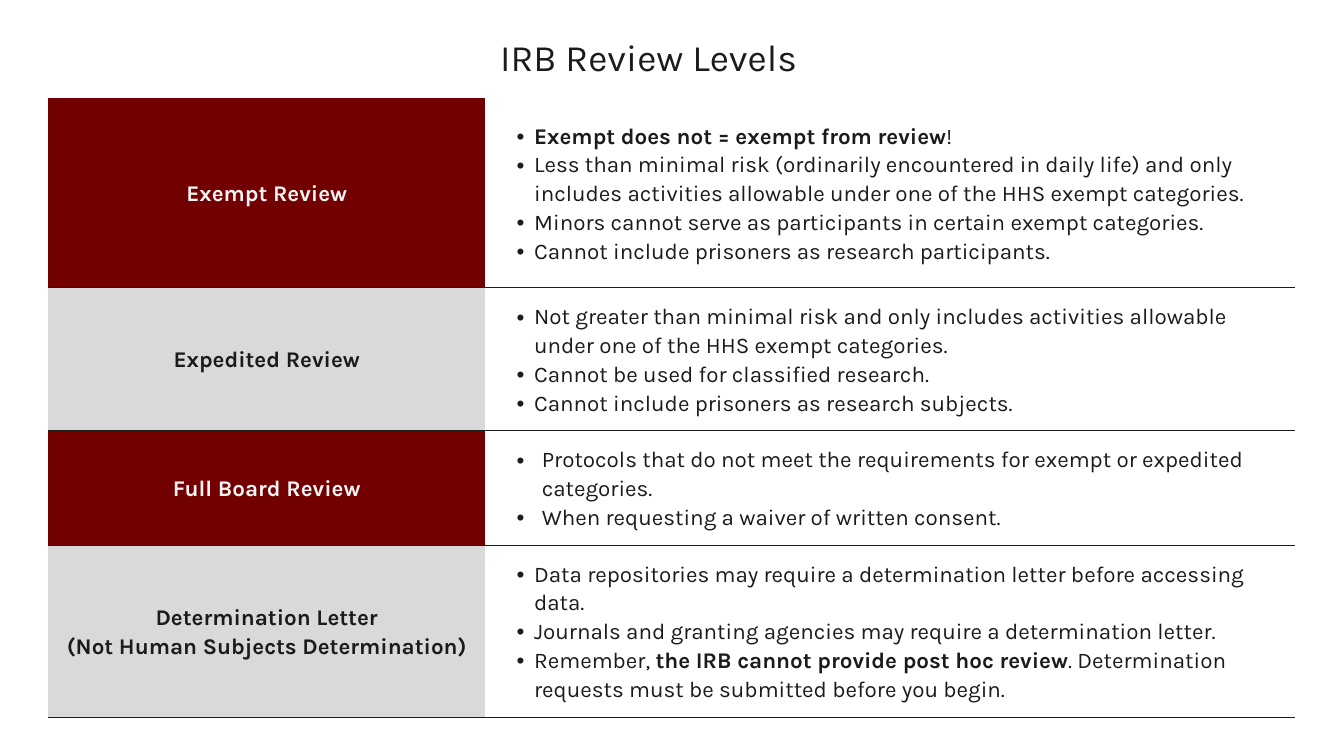
import pptx
import pptx.dml.color
import pptx.enum.text
import pptx.oxml.ns
import pptx.util
from lxml import etree

PX = 9525
INK, PALE, MAROON, GREY, WHITE = "1B1B19", "F4F4F4", "720000", "D9D9D9", "FFFFFF"
qn = pptx.oxml.ns.qn
CENTER = pptx.enum.text.PP_ALIGN.CENTER


def color(value):
    return pptx.dml.color.RGBColor.from_string(value)


def write(para, text, size, ink, leading, bold=False):
    para.line_spacing = pptx.util.Pt(leading)
    para.font.name = "Karla"
    para.font.size = pptx.util.Pt(size)
    para.font.color.rgb = color(ink)
    para.font.bold = bold
    for index, part in enumerate(text.split("**")):
        if part:
            span = para.add_run()
            span.text = part
            if index % 2:
                span.font.bold = True


levels = [
    (271, MAROON, PALE, 50, 25, ["Exempt Review"], [
        "**Exempt does not = exempt from review**!",
        "Less than minimal risk (ordinarily encountered in daily life) and only includes "
        "activities allowable under one of the HHS exempt categories.",
        "Minors cannot serve as participants in certain exempt categories.",
        "Cannot include prisoners as research participants.",
    ]),
    (193, GREY, INK, 50, 25, ["Expedited Review"], [
        "Not greater than minimal risk and only includes activities allowable "
        "under one of the HHS exempt categories.",
        "Cannot be used for classified research.",
        "Cannot include prisoners as research subjects.",
    ]),
    (154, MAROON, PALE, 61, 36, ["Full Board Review"], [
        "Protocols that do not meet the requirements for exempt or expedited categories.",
        "When requesting a waiver of written consent.",
    ]),
    (231, GREY, INK, 50, 25, ["Determination Letter", "(Not Human Subjects Determination)"], [
        "Data repositories may require a determination letter before accessing data.",
        "Journals and granting agencies may require a determination letter.",
        "Remember, **the IRB cannot provide post hoc review**. "
        "Determination requests must be submitted before you begin.",
    ]),
]

deck = pptx.Presentation()
deck.slide_width = 1920 * PX
deck.slide_height = 1080 * PX
page = deck.slides.add_slide(deck.slide_layouts[6])

widths = [624, 1157]
height = sum(level[0] for level in levels)
frame = page.shapes.add_table(len(levels), 2, 69 * PX, 140 * PX, sum(widths) * PX, height * PX)
table = frame.table
table.first_row = False
table.horz_banding = False
for column, width in zip(table.columns, widths):
    column.width = width * PX

for row, (height, fill, ink, margin, hang, names, points) in enumerate(levels):
    table.rows[row].height = height * PX
    for column, lines in enumerate([names, points]):
        cell = table.cell(row, column)
        cell.vertical_anchor = pptx.enum.text.MSO_ANCHOR.MIDDLE
        cell.margin_left = cell.margin_right = cell.margin_top = cell.margin_bottom = 20 * PX
        properties = cell._tc.get_or_add_tcPr()
        for side in ["lnL", "lnR", "lnT", "lnB"]:
            border = etree.SubElement(properties, qn("a:" + side))
            if side == "lnB" or (side == "lnT" and row > 0):
                border.set("w", str(pptx.util.Pt(0.75)))
                solid = etree.SubElement(border, qn("a:solidFill"))
                etree.SubElement(solid, qn("a:srgbClr"), val=INK)
            else:
                border.set("w", "0")
                etree.SubElement(border, qn("a:noFill"))
        cell.fill.solid()
        cell.fill.fore_color.rgb = color(WHITE if column else fill)

        for index, line in enumerate(lines):
            para = cell.text_frame.paragraphs[0] if index == 0 else cell.text_frame.add_paragraph()
            if column == 0:
                para.alignment = CENTER
                write(para, line, 24, ink, 30.8, True)
            else:
                para.level = 1
                settings = para._p.get_or_add_pPr()
                settings.set("marL", str(margin * PX))
                settings.set("indent", str(-hang * PX))
                etree.SubElement(settings, qn("a:buFont"), typeface="Arial")
                etree.SubElement(settings, qn("a:buChar"), char="•")
                write(para, line, 24, INK, 30.8)

box = page.shapes.add_textbox(155 * PX, 13 * PX, 1543 * PX, 90 * PX)
title = box.text_frame
title.word_wrap = True
title.margin_left = title.margin_right = title.margin_top = title.margin_bottom = 0
title.paragraphs[0].alignment = CENTER
write(title.paragraphs[0], "IRB Review Levels", 40, INK, 75)

deck.save("out.pptx")
